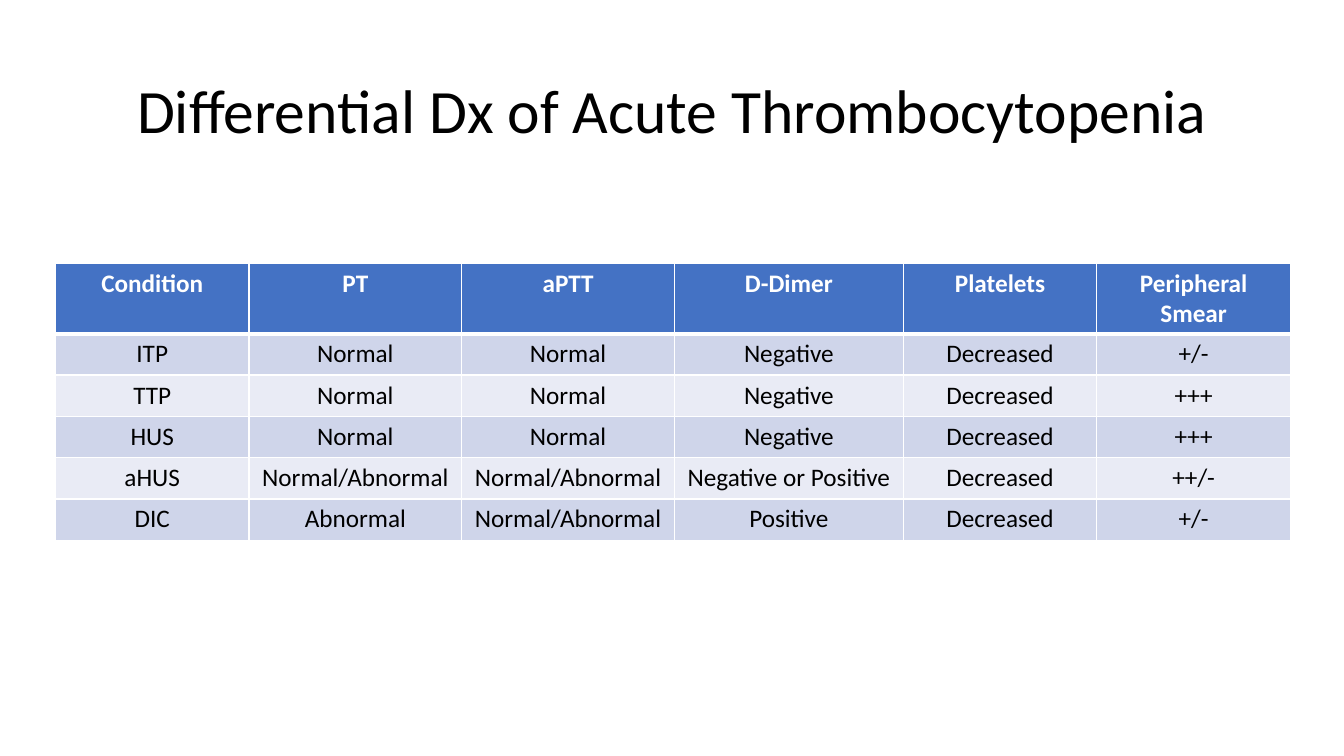
from dataclasses import dataclass

from lxml import etree
from pptx import Presentation
from pptx.dml.color import RGBColor
from pptx.enum.text import MSO_ANCHOR, PP_ALIGN
from pptx.oxml.ns import qn
from pptx.util import Inches, Pt

CENTER = PP_ALIGN.CENTER
MIDDLE = MSO_ANCHOR.MIDDLE
BLANK_LAYOUT = 6


@dataclass(frozen=True)
class Theme:
    """Colours, font and type sizes of the slide."""

    font: str = "Calibri"
    text: str = "000000"
    white: str = "FFFFFF"
    header: str = "4472C4"
    bands: tuple = ("CFD5EA", "E9EBF5")
    title_size: int = 44
    table_size: int = 18
    thin_rule: int = 1
    header_rule: int = 3


THEME = Theme()
TITLE = "Differential Dx of Acute Thrombocytopenia"
COLUMN_WIDTHS = (1.92, 2.11, 2.11, 2.27, 1.92, 1.92)
ROW_HEIGHT = 0.41
DIAGNOSES = (
    ("Condition", "PT", "aPTT", "D-Dimer", "Platelets", "Peripheral Smear"),
    ("ITP", "Normal", "Normal", "Negative", "Decreased", "+/-"),
    ("TTP", "Normal", "Normal", "Negative", "Decreased", "+++"),
    ("HUS", "Normal", "Normal", "Negative", "Decreased", "+++"),
    ("aHUS", "Normal/Abnormal", "Normal/Abnormal", "Negative or Positive", "Decreased", "++/-"),
    ("DIC", "Abnormal", "Normal/Abnormal", "Positive", "Decreased", "+/-"),
)


def add_span(para, text, size, color, bold=False):
    """Add one centred, formatted run to a paragraph."""
    para.alignment = CENTER
    span = para.add_run()
    span.text = text
    span.font.name = THEME.font
    span.font.size = Pt(size)
    span.font.bold = bold
    span.font.color.rgb = RGBColor.from_string(color)


def add_title(page, text):
    """Add the slide title."""
    box = page.shapes.add_textbox(Inches(0.92), Inches(0.4), Inches(11.5), Inches(1.45))
    frame = box.text_frame
    frame.word_wrap = True
    frame.vertical_anchor = MIDDLE
    para = frame.paragraphs[0]
    para.line_spacing = 0.9
    add_span(para, text, THEME.title_size, THEME.text)


def set_borders(cell, top, bottom):
    """Draw white cell borders with the given top and bottom widths."""
    properties = cell._tc.get_or_add_tcPr()
    widths = {"lnL": THEME.thin_rule, "lnR": THEME.thin_rule, "lnT": top, "lnB": bottom}
    for side, width in widths.items():
        line = etree.SubElement(properties, qn(f"a:{side}"), w=str(Pt(width)))
        fill = etree.SubElement(line, qn("a:solidFill"))
        etree.SubElement(fill, qn("a:srgbClr"), val=THEME.white)


def style_cell(cell, text, row):
    """Fill, border and label a cell according to its row."""
    is_header = row == 0
    top = THEME.header_rule if row == 1 else THEME.thin_rule
    bottom = THEME.header_rule if is_header else THEME.thin_rule
    set_borders(cell, top, bottom)
    background = THEME.header if is_header else THEME.bands[(row - 1) % 2]
    cell.fill.solid()
    cell.fill.fore_color.rgb = RGBColor.from_string(background)
    color = THEME.white if is_header else THEME.text
    add_span(cell.text_frame.paragraphs[0], text, THEME.table_size, color, is_header)


def add_diagnosis_table(page, records):
    """Add the table of conditions and laboratory findings."""
    table = page.shapes.add_table(
        len(records), len(COLUMN_WIDTHS), Inches(0.55), Inches(2.61),
        Inches(sum(COLUMN_WIDTHS)), Inches(ROW_HEIGHT * len(records)),
    ).table
    for column, width in zip(table.columns, COLUMN_WIDTHS):
        column.width = Inches(width)
    for row, record in enumerate(records):
        for column, text in enumerate(record):
            style_cell(table.cell(row, column), text, row)


def main():
    """Build and save the slide."""
    deck = Presentation()
    deck.slide_width = Inches(13.33)
    deck.slide_height = Inches(7.5)
    page = deck.slides.add_slide(deck.slide_layouts[BLANK_LAYOUT])
    add_title(page, TITLE)
    add_diagnosis_table(page, DIAGNOSES)
    deck.save("out.pptx")


if __name__ == "__main__":
    main()
